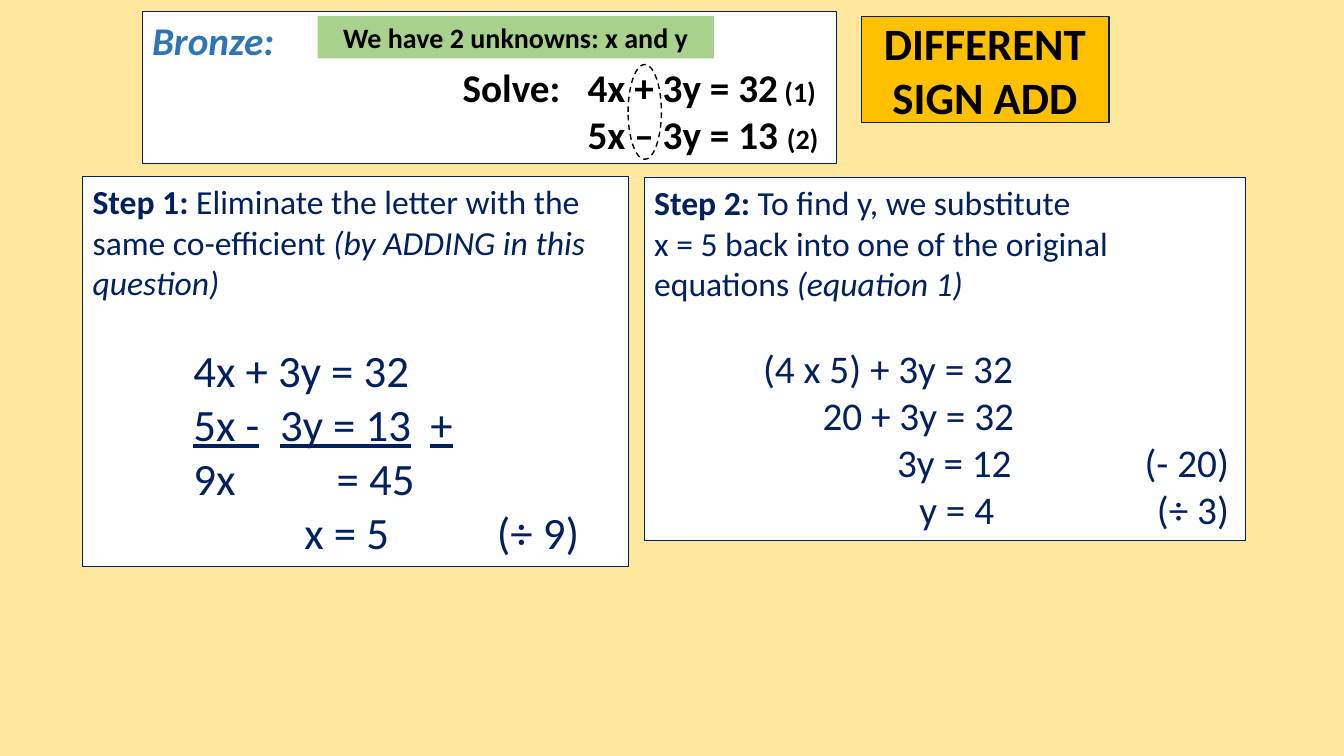
from dataclasses import dataclass
from lxml.etree import SubElement
from pptx import Presentation
from pptx.dml.color import RGBColor
from pptx.enum.dml import MSO_LINE
from pptx.enum.shapes import MSO_SHAPE
from pptx.enum.text import MSO_ANCHOR, MSO_AUTO_SIZE, PP_ALIGN
from pptx.oxml.ns import qn
from pptx.util import Inches, Pt


@dataclass(frozen=True)
class Theme:
    font: str = "Calibri"
    page: str = "FFE79E"
    white: str = "FFFFFF"
    black: str = "000000"
    navy: str = "002060"
    blue: str = "2E75B6"
    gold: str = "FFC000"
    green: str = "A9D18E"
    small: int = 20
    body: int = 24
    equation: int = 28
    large: int = 32


class Slide:
    def __init__(self, prs, theme):
        self.theme = theme
        self.s = prs.slides.add_slide(prs.slide_layouts[6])
        fill = self.s.background.fill
        fill.solid()
        fill.fore_color.rgb = RGBColor.from_string(theme.page)

    def shape(self, kind, at, fill=None, line=None, width=0.75):
        sp = self.s.shapes.add_shape(kind, *map(Inches, at))
        sp.shadow.inherit = False
        if fill:
            sp.fill.solid()
            sp.fill.fore_color.rgb = RGBColor.from_string(fill)
        else:
            sp.fill.background()
        if line:
            sp.line.color.rgb = RGBColor.from_string(line)
            sp.line.width = Pt(width)
        else:
            sp.line.fill.background()
        return sp

    def ring(self, at):
        sp = self.shape(MSO_SHAPE.OVAL, at, line=self.theme.black, width=1)
        sp.line.dash_style = MSO_LINE.DASH

    def box(self, at, paragraphs, fill, line=None, grow=False):
        tf = self.shape(MSO_SHAPE.RECTANGLE, at, fill, line).text_frame
        formats = {
            "word_wrap": True,
            "auto_size": MSO_AUTO_SIZE.SHAPE_TO_FIT_TEXT if grow else MSO_AUTO_SIZE.NONE,
            "vertical_anchor": MSO_ANCHOR.TOP if grow else MSO_ANCHOR.MIDDLE,
        }
        for name, value in formats.items():
            setattr(tf, name, value)
        for i, (runs, tabs, before) in enumerate(paragraphs):
            p = tf.paragraphs[0] if i == 0 else tf.add_paragraph()
            self.tabs(p, tabs)
            p.alignment = PP_ALIGN.LEFT if grow else PP_ALIGN.CENTER
            if before:
                p.space_before = Pt(before)
            for text, style in runs:
                self.run(p, text, style)

    def tabs(self, p, stops):
        if stops:
            tab_list = SubElement(p._p.get_or_add_pPr(), qn("a:tabLst"))
            for pos, algn in stops:
                SubElement(tab_list, qn("a:tab"), pos=str(Inches(pos)), algn=algn)

    def run(self, p, text, style):
        r = p.add_run()
        r.text = text
        formats = {"name": self.theme.font, **style}
        r.font.color.rgb = RGBColor.from_string(formats.pop("color"))
        formats["size"] = Pt(formats["size"])
        for name, value in formats.items():
            setattr(r.font, name, value)


def left(*stops):
    return [(pos, "l") for pos in stops]


def main():
    t = Theme()
    prs = Presentation()
    prs.slide_width, prs.slide_height = Inches(13.33), Inches(7.5)
    slide = Slide(prs, t)

    level = {"size": t.equation, "color": t.blue, "bold": True, "italic": True}
    problem = {"size": t.equation, "color": t.black, "bold": True}
    label = {**problem, "size": t.small}
    sign = {**problem, "size": t.large}
    body = {"size": t.body, "color": t.navy}
    step = {**body, "bold": True}
    aside = {**body, "italic": True}
    large = {**body, "size": t.large}
    equation = {**body, "size": t.equation}
    gap = 29

    slide.box((1.41, 0.11, 6.89, 1.51), [
        ([("Bronze:", level)], [], 0),
        ([("\tSolve:\t4x + 3y = 32", problem), (" (1)", label)], left(3.08, 4.32), 0),
        ([("\t5x – 3y = 13 ", problem), ("(2)", label)], left(4.32), 0),
    ], t.white, t.navy, grow=True)

    slide.box((8.54, 0.16, 2.46, 1.06),
              [([("DIFFERENT SIGN ADD", sign)], [], 0)], t.gold, t.navy)

    slide.box((0.82, 1.75, 5.41, 3.87), [
        ([("Step 1: ", step),
          ("Eliminate the letter with the same co-efficient ", body),
          ("(by ADDING in this question)", aside)], [], 0),
        ([("\t4x + 3y = 32", large)], left(1), gap),
        ([("\t", large), ("5x -\t3y = 13\t+", {**large, "underline": True})],
         left(1, 1.86, 3.35), 0),
        ([("\t9x\t= 45", large)], left(1, 2.42), 0),
        ([("\tx = 5\t(÷ 9)", large)], left(2.1, 4.01), 0),
    ], t.white, t.navy, grow=True)

    slide.box((3.15, 0.16, 3.93, 0.42),
              [([("We have 2 unknowns: x and y", label)], [], 0)], t.green)

    note = [(5.7, "r")]
    slide.box((6.39, 1.76, 5.96, 3.6), [
        ([("Step 2: ", step), ("To find y, we substitute", body)], [], 0),
        ([("x = 5 back into one of the original equations ", body),
          ("(equation 1)", aside)], [], 0),
        ([("\t(4 x 5) + 3y = 32", equation)], left(1.08), gap),
        ([("\t20 + 3y = 32", equation)], left(1.67), 0),
        ([("\t3y = 12\t(- 20)", equation)], left(2.41) + note, 0),
        ([("\ty = 4\t(÷ 3)", equation)], left(2.63) + note, 0),
    ], t.white, t.navy, grow=True)

    slide.ring((6.23, 0.64, 0.33, 0.94))
    prs.save("out.pptx")


if __name__ == "__main__":
    main()
